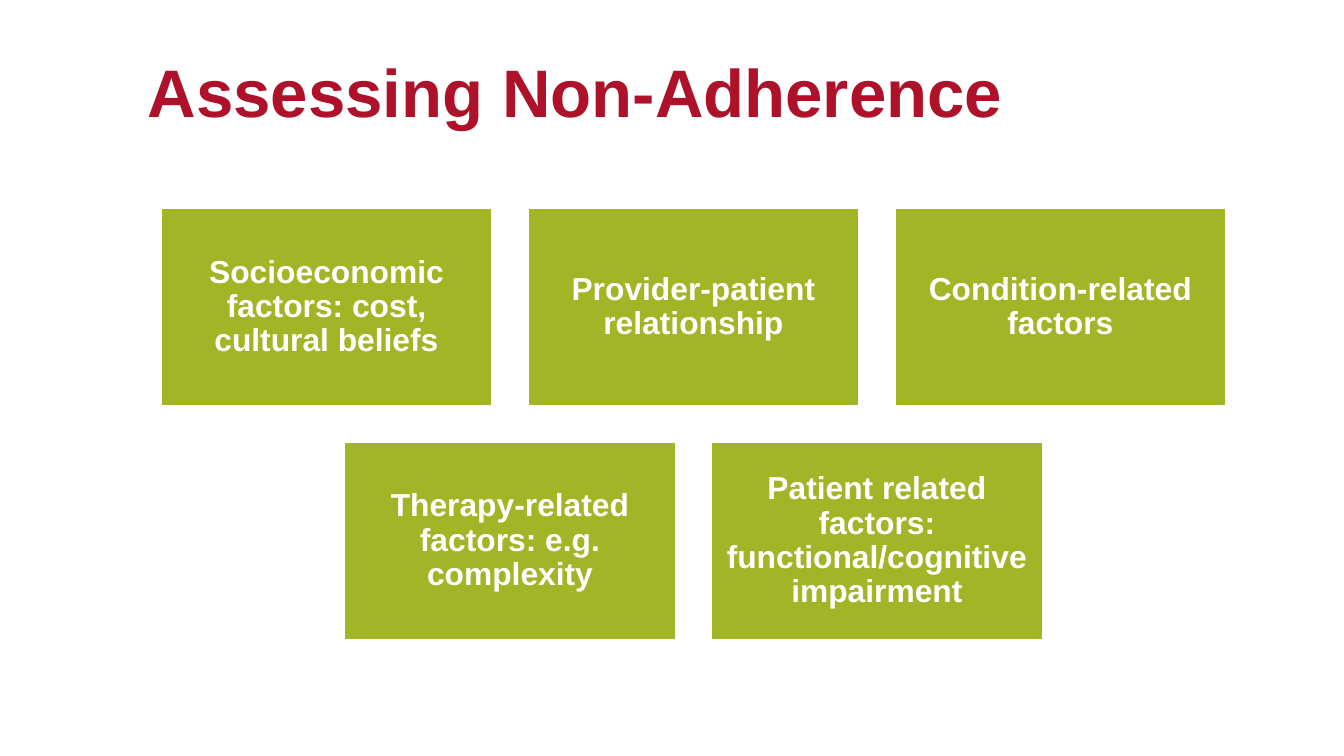
from pptx import Presentation
from pptx.dml.color import RGBColor
from pptx.enum import shapes, text
from pptx.util import Inches, Pt

TITLE = "Assessing Non-Adherence"
FACTOR_ROWS = [
    [
        "Socioeconomic factors: cost, cultural beliefs",
        "Provider-patient relationship",
        "Condition-related factors",
    ],
    [
        "Therapy-related factors: e.g. complexity",
        "Patient related factors: functional/cognitive impairment",
    ],
]
COLORS = {"title": "AD122A", "card": "A2B526", "white": "FFFFFF"}

SLIDE_W = 10
SLIDE_H = SLIDE_W * 9 / 16
CARD_W, CARD_H = 2.48, 1.49
GAP = 0.25
GRID_CENTER, GRID_TOP = 5.16, 1.54


def color(name):
    return RGBColor.from_string(COLORS[name])


def write(shape, words, size, color_name, align, side, top):
    """Put one bold, vertically centred paragraph into a shape."""
    frame = shape.text_frame
    frame.word_wrap = True
    frame.vertical_anchor = text.MSO_ANCHOR.MIDDLE
    frame.margin_left = frame.margin_right = Inches(side)
    frame.margin_top = frame.margin_bottom = Inches(top)
    paragraph = frame.paragraphs[0]
    paragraph.text = words
    paragraph.alignment = align
    paragraph.line_spacing = 0.9
    font = paragraph.font
    font.name, font.size, font.bold = "Arial", Pt(size), True
    font.color.rgb = color(color_name)


prs = Presentation()
prs.slide_width, prs.slide_height = Inches(SLIDE_W), Inches(SLIDE_H)
slide = prs.slides.add_slide(prs.slide_layouts[6])

# Title
title = slide.shapes.add_textbox(Inches(1), Inches(0.24), Inches(9), Inches(0.94))
write(title, TITLE, 36, "title", text.PP_ALIGN.LEFT, 0.1, 0)

# Factor cards, each row centred on the same axis
for row, factors in enumerate(FACTOR_ROWS):
    row_width = len(factors) * (CARD_W + GAP) - GAP
    row_left = GRID_CENTER - row_width / 2
    top = GRID_TOP + row * (CARD_H + GAP)
    for column, factor in enumerate(factors):
        left = row_left + column * (CARD_W + GAP)
        card = slide.shapes.add_shape(
            shapes.MSO_SHAPE.RECTANGLE,
            Inches(left), Inches(top), Inches(CARD_W), Inches(CARD_H),
        )
        card.shadow.inherit = False
        card.fill.solid()
        card.fill.fore_color.rgb = color("card")
        card.line.color.rgb = color("white")
        card.line.width = Pt(2)
        write(card, factor, 17, "white", text.PP_ALIGN.CENTER, 0.07, 0.07)

prs.save("out.pptx")
